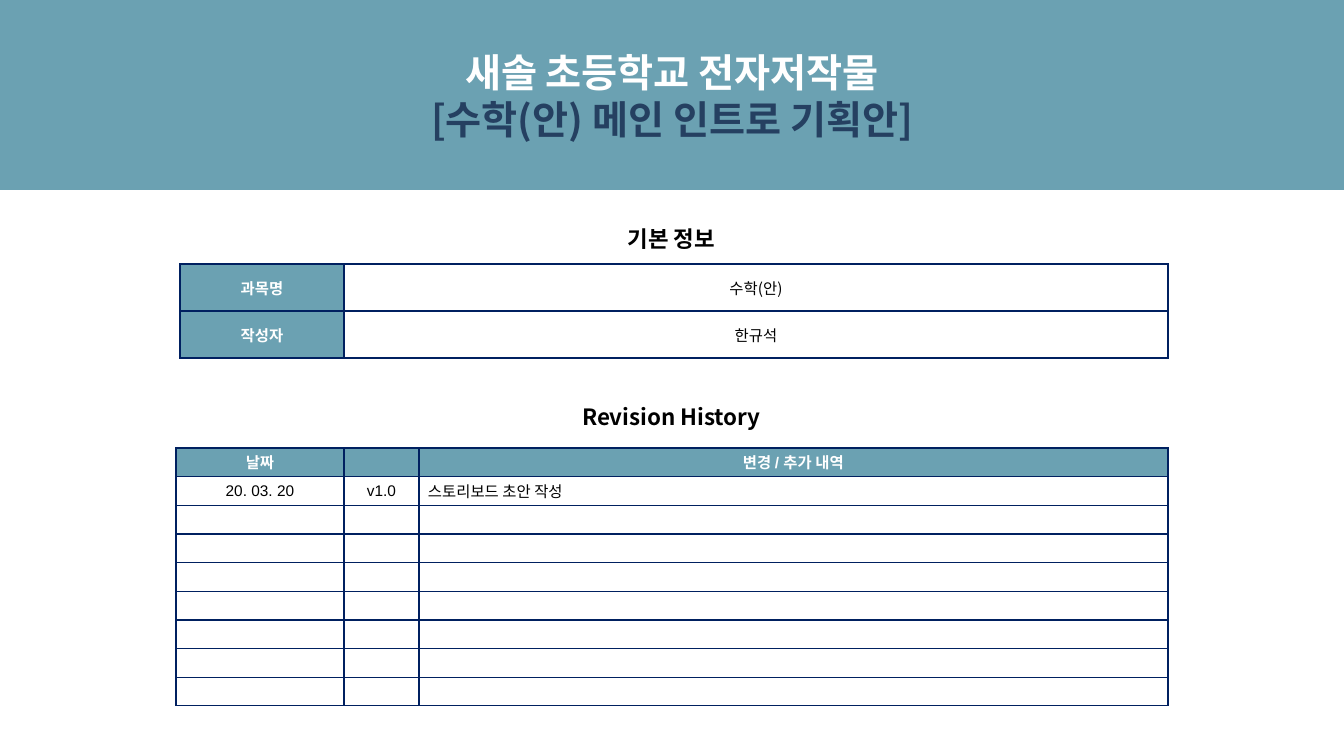
import lxml.etree
import pptx
import pptx.dml.color
import pptx.enum.text
import pptx.oxml.ns
import pptx.util

PX = 914400 / 100.8
COLORS = {"teal": "6BA1B2", "navy": "002060", "slate": "254061",
          "white": "FFFFFF", "black": "000000"}
KOREAN = "Noto Sans CJK KR"
LATIN = "Arial"
ALIGN = pptx.enum.text.PP_ALIGN
MIDDLE = pptx.enum.text.MSO_ANCHOR.MIDDLE
qn = pptx.oxml.ns.qn


def px(n):
    return pptx.util.Emu(round(n * PX))


def rgb(name):
    return pptx.dml.color.RGBColor.from_string(COLORS[name])


def write(p, text, size=11, font=KOREAN, color="black", bold=False,
          align=ALIGN.CENTER, spacing=None):
    p.alignment = align
    if spacing:
        p.line_spacing = spacing
    if not text:
        lxml.etree.SubElement(p._p, qn("a:endParaRPr"), sz=str(size * 100))
        return
    r = p.add_run()
    r.text = text
    r.font.size = pptx.util.Pt(size)
    r.font.name = font
    r.font.bold = bold
    r.font.color.rgb = rgb(color)
    lxml.etree.SubElement(r._r.get_or_add_rPr(), qn("a:ea"), typeface=KOREAN)


def add_band(slide, x, y, w, h):
    s = slide.shapes.title
    s.left, s.top, s.width, s.height = px(x), px(y), px(w), px(h)
    s.fill.solid()
    s.fill.fore_color.rgb = rgb("teal")
    tf = s.text_frame
    tf.auto_size = pptx.enum.text.MSO_AUTO_SIZE.NONE
    tf.vertical_anchor = MIDDLE
    write(tf.paragraphs[0], "새솔 초등학교 전자저작물", size=28, color="white", bold=True)
    write(tf.add_paragraph(), "[수학(안) 메인 인트로 기획안]", size=28, color="slate", bold=True)


def add_heading(slide, text, x, y, w, h):
    tf = slide.shapes.add_textbox(px(x), px(y), px(w), px(h)).text_frame
    tf.word_wrap = True
    tf.vertical_anchor = MIDDLE
    write(tf.paragraphs[0], text, size=16, bold=True)


def add_borders(cell):
    tcPr = cell._tc.get_or_add_tcPr()
    for i, side in enumerate(("lnL", "lnR", "lnT", "lnB")):
        ln = lxml.etree.Element(qn("a:" + side), w="12700")
        fill = lxml.etree.SubElement(ln, qn("a:solidFill"))
        lxml.etree.SubElement(fill, qn("a:srgbClr"), val=COLORS["navy"])
        tcPr.insert(i, ln)


def add_grid(slide, x, y, h, widths, rows, is_header, cell_format):
    row_h = h / len(rows)
    tbl = slide.shapes.add_table(len(rows), len(widths), px(x), px(y),
                                 px(sum(widths)), px(h)).table
    tbl.first_row = tbl.horz_banding = False
    for col, w in zip(tbl.columns, widths):
        col.width = px(w)
    for i, row in enumerate(rows):
        tbl.rows[i].height = px(row_h)
        for j, text in enumerate(row):
            cell = tbl.cell(i, j)
            cell.vertical_anchor = MIDDLE
            cell.margin_left = cell.margin_right = px(9)
            cell.margin_top = cell.margin_bottom = px(3)
            header = is_header(i, j)
            if header:
                cell.fill.solid()
                cell.fill.fore_color.rgb = rgb("teal")
            else:
                cell.fill.background()
            add_borders(cell)
            style = dict(color="white", bold=True, font=LATIN) if header else {}
            write(cell.text_frame.paragraphs[0], text, **{**style, **cell_format(i, j)})


def add_basic_info(slide, x, y, w, h):
    add_heading(slide, "기본 정보", x + 389, y, 205, 37)
    rows = [("과목명", "수학(안)"), ("작성자", "한규석")]
    add_grid(slide, x, y + 44, h - 44, [164, w - 164], rows,
             lambda i, j: j == 0, lambda i, j: {})


def add_revision_history(slide, x, y, w, h):
    add_heading(slide, "Revision History", x + 393, y, 205, 37)
    rows = [("날짜", "", "변경 / 추가 내역"),
            ("20. 03. 20", "v1.0", "스토리보드 초안 작성")] + [("", "", "")] * 7

    def cell_format(i, j):
        left = i > 0 and j == 2
        return dict(font=LATIN, align=ALIGN.LEFT if left else ALIGN.CENTER,
                    spacing=0.9 if i == 0 or left else None)

    add_grid(slide, x, y + 50, h - 50, [168, 75, w - 243], rows,
             lambda i, j: i == 0, cell_format)


def main():
    prs = pptx.Presentation()
    prs.slide_width, prs.slide_height = px(1344), px(756)
    slide = prs.slides.add_slide(prs.slide_layouts[5])
    add_band(slide, 0, 0, 1344, 190)
    add_basic_info(slide, 180, 220, 988, 138)
    add_revision_history(slide, 176, 398, 992, 308)
    prs.save("out.pptx")


if __name__ == "__main__":
    main()
